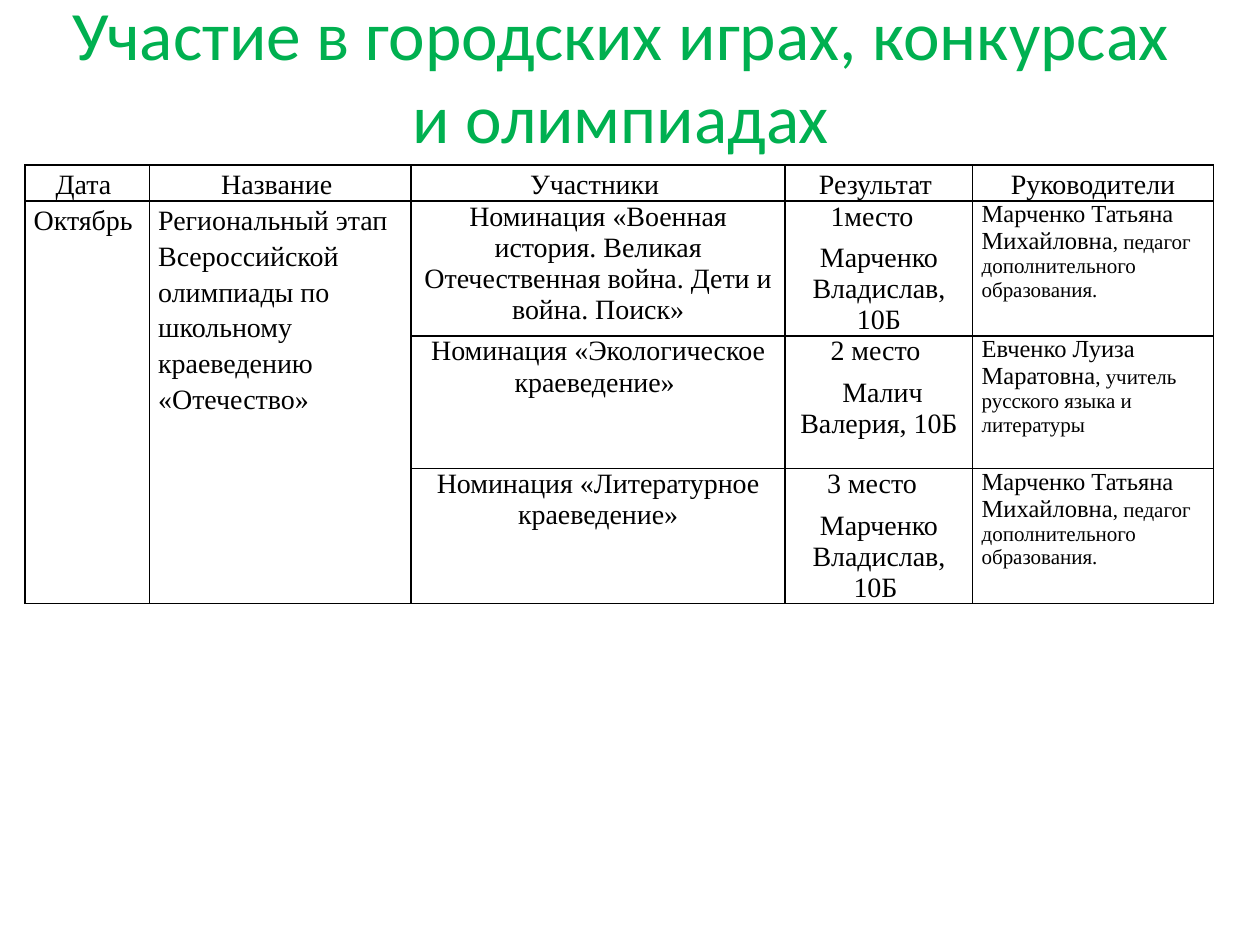
from dataclasses import dataclass

from lxml.etree import SubElement
from pptx import Presentation
from pptx.dml.color import RGBColor
from pptx.enum.text import MSO_ANCHOR as Anchor, MSO_AUTO_SIZE as AutoSize, PP_ALIGN as Align
from pptx.oxml.ns import qn
from pptx.util import Cm, Pt


@dataclass(frozen=True)
class Theme:
    title_font: str = "Calibri"
    table_font: str = "Times New Roman"
    title_color: RGBColor = RGBColor(0x00, 0xB0, 0x50)
    ink: RGBColor = RGBColor(0, 0, 0)
    title_size: float = 39.6
    body: int = 16
    name: int = 14
    role: int = 12
    border: float = 1
    loose: float = 1.15
    gap: int = 6


THEME = Theme()
TITLE = "Участие в городских играх, конкурсах и олимпиадах"
HEADERS = ["Дата ", "Название ", "Участники ", "Результат ", "Руководители"]
MONTH = "Октябрь"
CONTEST = "Региональный этап Всероссийской олимпиады по школьному краеведению  «Отечество»"
TEACHER = ("Марченко Татьяна Михайловна", ", педагог дополнительного образования.")
# Nomination, result paragraphs, supervisor (name, role)
ENTRIES = [
    ("Номинация «Военная история. Великая Отечественная война. Дети и война. Поиск»",
     ["1место  ", "Марченко Владислав, 10Б"], TEACHER),
    ("Номинация «Экологическое краеведение» ",
     ["2 место ", " Малич Валерия, 10Б"],
     ("Евченко Луиза Маратовна", ", учитель русского языка и литературы")),
    ("Номинация «Литературное краеведение»",
     ["3 место  ", "Марченко Владислав, 10Б "], TEACHER),
]
COL_WIDTHS = [2.51, 5.28, 7.54, 3.78, 4.85]
ROW_HEIGHTS = [0.71, 2.72, 2.67, 2.72]


def format_run(r, font, size, color):
    r.font.name, r.font.size, r.font.color.rgb = font, Pt(size), color


def add_title(slide, left, top, width, height):
    sp = slide.shapes.title
    sp.left, sp.top, sp.width, sp.height = Cm(left), Cm(top), Cm(width), Cm(height)
    tf = sp.text_frame
    tf.text = TITLE
    tf.word_wrap = True
    tf.auto_size = AutoSize.NONE
    tf.vertical_anchor = Anchor.MIDDLE
    tf.margin_bottom = Cm(1.8)  # lifts the two lines above the table
    p = tf.paragraphs[0]
    p.alignment = Align.CENTER
    format_run(p.runs[0], THEME.title_font, THEME.title_size, THEME.title_color)


def style_cell(cell):
    cell.margin_left = cell.margin_right = Cm(0.18)
    cell.margin_top = cell.margin_bottom = 0
    tc_pr = cell._tc.get_or_add_tcPr()
    for side in ("lnL", "lnR", "lnT", "lnB"):
        ln = SubElement(tc_pr, qn(f"a:{side}"), w=str(Pt(THEME.border)))
        fill = SubElement(ln, qn("a:solidFill"))
        SubElement(fill, qn("a:srgbClr"), val=str(THEME.ink))
    cell.fill.background()


def fill_cell(cell, paragraphs, align=Align.LEFT, spacing=1.0, gap=THEME.gap):
    """Each paragraph is a list of (text, size) runs."""
    tf = cell.text_frame
    for i, runs in enumerate(paragraphs):
        p = tf.add_paragraph() if i else tf.paragraphs[0]
        p.alignment, p.line_spacing, p.space_after = align, spacing, Pt(gap)
        for text, size in runs:
            r = p.add_run()
            r.text = text
            format_run(r, THEME.table_font, size, THEME.ink)


def add_results_table(slide, left, top):
    frame = slide.shapes.add_table(len(ROW_HEIGHTS), len(COL_WIDTHS), Cm(left), Cm(top),
                                   Cm(sum(COL_WIDTHS)), Cm(sum(ROW_HEIGHTS)))
    table = frame.table
    table.first_row = table.horz_banding = False
    for col, width in zip(table.columns, COL_WIDTHS):
        col.width = Cm(width)
    for row, height in zip(table.rows, ROW_HEIGHTS):
        row.height = Cm(height)
    for cell in table.iter_cells():
        style_cell(cell)

    # Header row
    for c, text in enumerate(HEADERS):
        fill_cell(table.cell(0, c), [[(text, THEME.body)]], Align.CENTER, THEME.loose)

    # Month and contest span all entries
    for c, text in enumerate((MONTH, CONTEST)):
        table.cell(1, c).merge(table.cell(len(ENTRIES), c))
        fill_cell(table.cell(1, c), [[(text, THEME.body)]], spacing=THEME.loose)

    # One row per nomination
    for row, (nomination, result, (name, role)) in enumerate(ENTRIES, 1):
        fill_cell(table.cell(row, 2), [[(nomination, THEME.body)]], Align.CENTER, gap=0)
        fill_cell(table.cell(row, 3), [[(text, THEME.body)] for text in result], Align.CENTER)
        fill_cell(table.cell(row, 4), [[(name, THEME.name), (role, THEME.role)]])


def main():
    prs = Presentation()
    prs.slide_width, prs.slide_height = Cm(25.4), Cm(19.05)
    slide = prs.slides.add_slide(prs.slide_layouts[5])
    add_title(slide, 1.09, 0.74, 22.86, 3.18)
    add_results_table(slide, 0.5, 3.33)
    prs.save("out.pptx")


if __name__ == "__main__":
    main()
